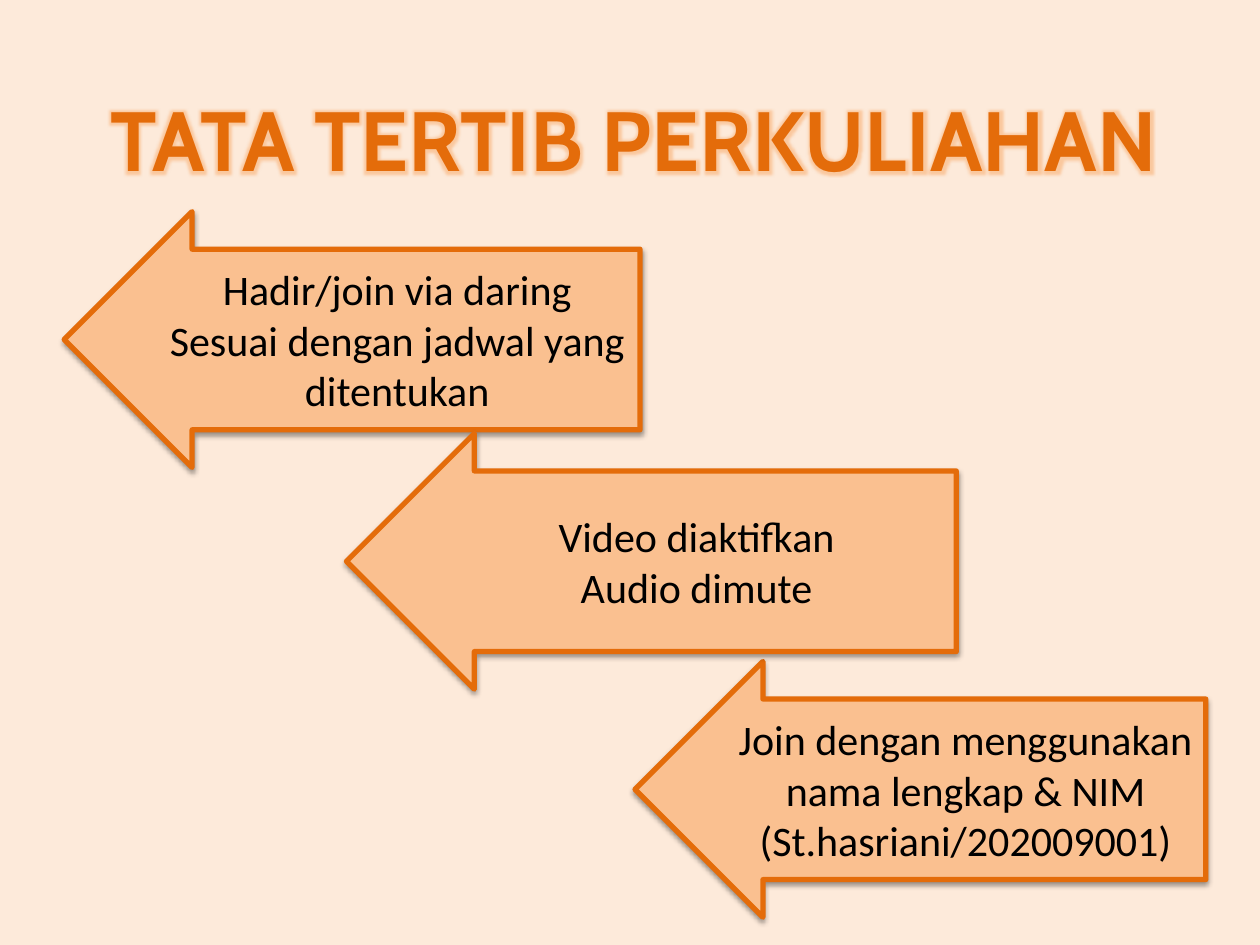
from lxml.etree import fromstring
from pptx import Presentation
from pptx.dml.color import RGBColor
from pptx.enum.shapes import MSO_SHAPE
from pptx.enum.text import MSO_ANCHOR, PP_ALIGN
from pptx.util import Inches, Pt

COLORS = {"bg": "FDEADA", "accent": "E46C0A", "fill": "FAC090", "text": "000000"}
COLS, ROWS = 100, 75
TITLE = ("TATA TERTIB PERKULIAHAN", (2.8, 4.7, 95, 12.5))
ARROW_H = 20.3
ARROWS = [
    (["Join dengan menggunakan nama lengkap & NIM (St.hasriani/202009001)"],
     (50.4, 52.5, 45.3, ARROW_H)),
    (["Hadir/join via daring", "Sesuai dengan jadwal yang ditentukan"],
     (5.1, 16.8, 45.7, ARROW_H)),
    (["Video diaktifkan", "Audio dimute"], (27.5, 34.4, 48.4, ARROW_H)),
]
TITLE_FONT = {"name": "Cabin", "size": Pt(48), "bold": True}
BODY_FONT = {"name": "Calibri", "size": Pt(24)}
FRAME = {"word_wrap": True, "vertical_anchor": MSO_ANCHOR.MIDDLE}
NS = 'xmlns:a="http://schemas.openxmlformats.org/drawingml/2006/main"'
GLOW = f"""<a:effectLst {NS}><a:glow rad="{Pt(6)}"><a:srgbClr val="{COLORS['fill']}">
<a:alpha val="80000"/></a:srgbClr></a:glow></a:effectLst>"""
SHADOW = f"""<a:effectLst {NS}><a:outerShdw blurRad="{Pt(3.1)}" dist="{Pt(1.6)}"
dir="5400000" rotWithShape="0"><a:srgbClr val="{COLORS['text']}">
<a:alpha val="38000"/></a:srgbClr></a:outerShdw></a:effectLst>"""


def rgb(key):
    return RGBColor.from_string(COLORS[key])


def apply(obj, values):
    for name, value in values.items():
        setattr(obj, name, value)


def place(box):
    x, y, w, h = box
    return [round(v) for v in (x * prs.slide_width / COLS, y * prs.slide_height / ROWS,
                               w * prs.slide_width / COLS, h * prs.slide_height / ROWS)]


def write(sp, lines, font, color):
    tf = sp.text_frame
    apply(tf, FRAME)
    tf.text = "\n".join(lines)
    for p in tf.paragraphs:
        p.alignment = PP_ALIGN.CENTER
        for r in p.runs:
            apply(r.font, font)
            r.font.color.rgb = rgb(color)


def add_title(s, text, box):
    sp = s.shapes.add_textbox(*place(box))
    write(sp, [text], TITLE_FONT, "accent")
    r = sp.text_frame.paragraphs[0].runs[0]
    r.font.fill._xPr.find("{*}solidFill").addnext(fromstring(GLOW))


def add_arrow(s, lines, box):
    sp = s.shapes.add_shape(MSO_SHAPE.LEFT_ARROW, *place(box))
    sp.adjustments[0], sp.adjustments[1] = 0.706, 0.5
    sp.fill.solid()
    sp.fill.fore_color.rgb = rgb("fill")
    sp.line.color.rgb = rgb("accent")
    sp.line.width = Pt(3)
    sp.shadow.inherit = False
    effects = sp._element.spPr.find("{*}effectLst")
    effects.getparent().replace(effects, fromstring(SHADOW))
    write(sp, lines, BODY_FONT, "text")


prs = Presentation()
prs.slide_width, prs.slide_height = Inches(10), Inches(7.5)
s = prs.slides.add_slide(prs.slide_layouts[6])
s.background.fill.solid()
s.background.fill.fore_color.rgb = rgb("bg")
add_title(s, *TITLE)
for lines, box in ARROWS:
    add_arrow(s, lines, box)
prs.save("out.pptx")
